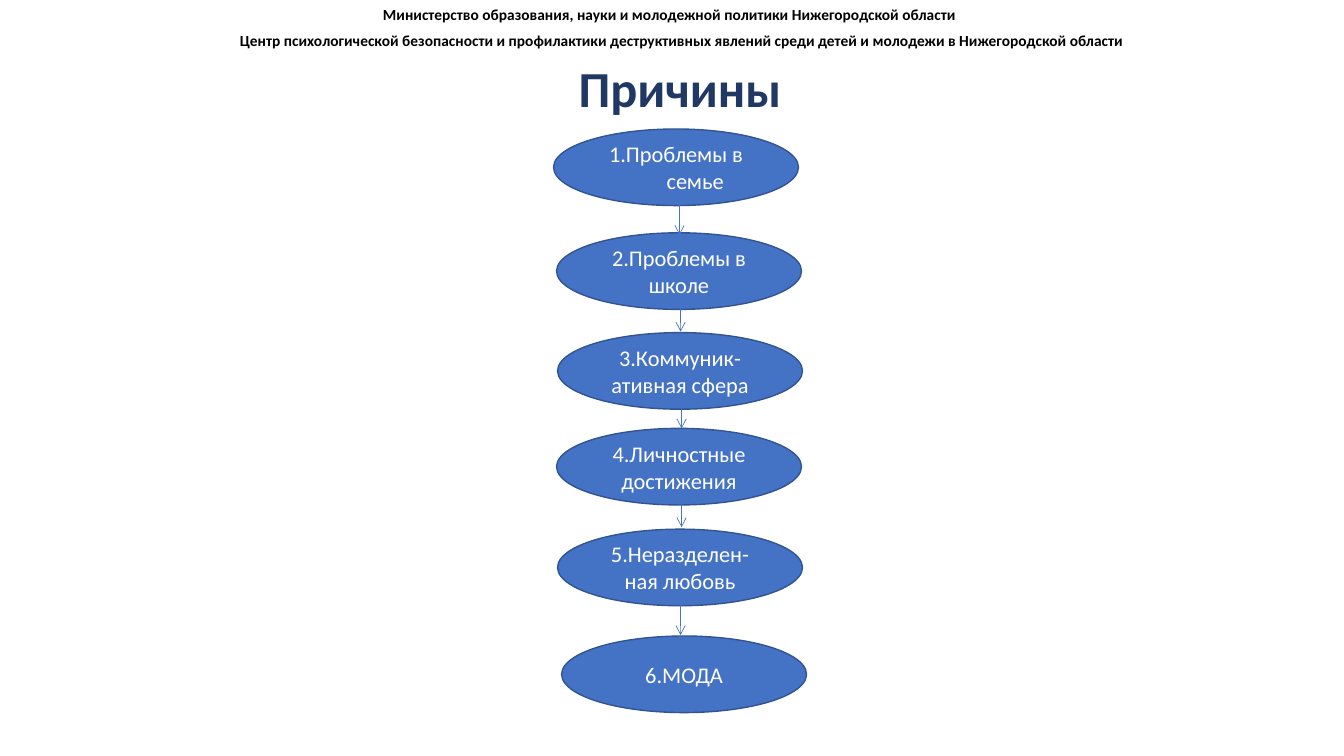
"""Build the slide «Причины»: six causes linked from top to bottom by arrows."""
from lxml.etree import SubElement
from pptx import Presentation
from pptx.dml.color import RGBColor
from pptx.enum.shapes import MSO_CONNECTOR, MSO_SHAPE
from pptx.enum.text import MSO_ANCHOR, PP_ALIGN
from pptx.oxml.ns import qn
from pptx.util import Pt

PX = 9144
COLORS = {"header": "000000", "title": "203864", "cause": "4472C4",
          "outline": "325491", "cause_text": "FFFFFF"}
CAUSE_WIDTH, CAUSE_HEIGHT = 243, 76
ARROW_LENGTH = 31
HANGING = 38


def color(name):
    return RGBColor.from_string(COLORS[name])


def write(shape, text, *, size, ink, bold=False, align=PP_ALIGN.LEFT,
          anchor=MSO_ANCHOR.TOP, wrap=True, hanging=0):
    frame = shape.text_frame
    frame.word_wrap = wrap
    frame.vertical_anchor = anchor
    paragraph = frame.paragraphs[0]
    paragraph.text = text
    paragraph.alignment = align
    if hanging:
        properties = paragraph._p.get_or_add_pPr()
        properties.set("marL", str(hanging * PX))
        properties.set("indent", str(-hanging * PX))
    for run in paragraph.runs:
        run.font.name = "Calibri"
        run.font.size = Pt(size)
        run.font.bold = bold
        run.font.color.rgb = color(ink)


presentation = Presentation()
presentation.slide_width = 1333 * PX
presentation.slide_height = 750 * PX
slide = presentation.slides.add_slide(presentation.slide_layouts[6])
shapes = slide.shapes

headers = [
    (370, 0, 832, "Министерство образования, науки и молодежной политики Нижегородской области"),
    (228, 26, 978, "Центр психологической безопасности и профилактики деструктивных явлений "
                   "среди детей и молодежи в Нижегородской области"),
]
for left, top, width, text in headers:
    header = shapes.add_textbox(left * PX, top * PX, width * PX, 29 * PX)
    write(header, text, size=11, ink="header", bold=True)

title = shapes.add_textbox(563 * PX, 52 * PX, 223 * PX, 71 * PX)
write(title, "Причины", size=36, ink="title", bold=True, align=PP_ALIGN.CENTER, wrap=False)

causes = [
    (549, 128, "1.Проблемы в семье", HANGING),
    (552, 231, "2.Проблемы в школе", 0),
    (553, 330, "3.Коммуник-\vативная сфера", 0),
    (552, 425, "4.Личностные достижения", 0),
    (553, 525, "5.Неразделен-\vная любовь", 0),
    (557, 631, "6.МОДА", 0),
]
for left, top, text, hanging in causes:
    cause = shapes.add_shape(MSO_SHAPE.OVAL, left * PX, top * PX,
                             CAUSE_WIDTH * PX, CAUSE_HEIGHT * PX)
    cause.shadow.inherit = False
    cause.fill.solid()
    cause.fill.fore_color.rgb = color("cause")
    cause.line.color.rgb = color("outline")
    cause.line.width = Pt(1)
    write(cause, text, size=16, ink="cause_text", align=PP_ALIGN.CENTER,
          anchor=MSO_ANCHOR.MIDDLE, hanging=hanging)

for x, top in [(674, 202), (675, 298), (676, 394), (676, 492), (675, 599)]:
    arrow = shapes.add_connector(MSO_CONNECTOR.STRAIGHT, x * PX, top * PX,
                                 x * PX, (top + ARROW_LENGTH) * PX)
    arrow.line.color.rgb = color("cause")
    arrow.line.width = Pt(0.5)
    SubElement(arrow.line._get_or_add_ln(), qn("a:tailEnd"), type="arrow")
    SubElement(arrow._element.spPr, qn("a:effectLst"))

presentation.save("out.pptx")
